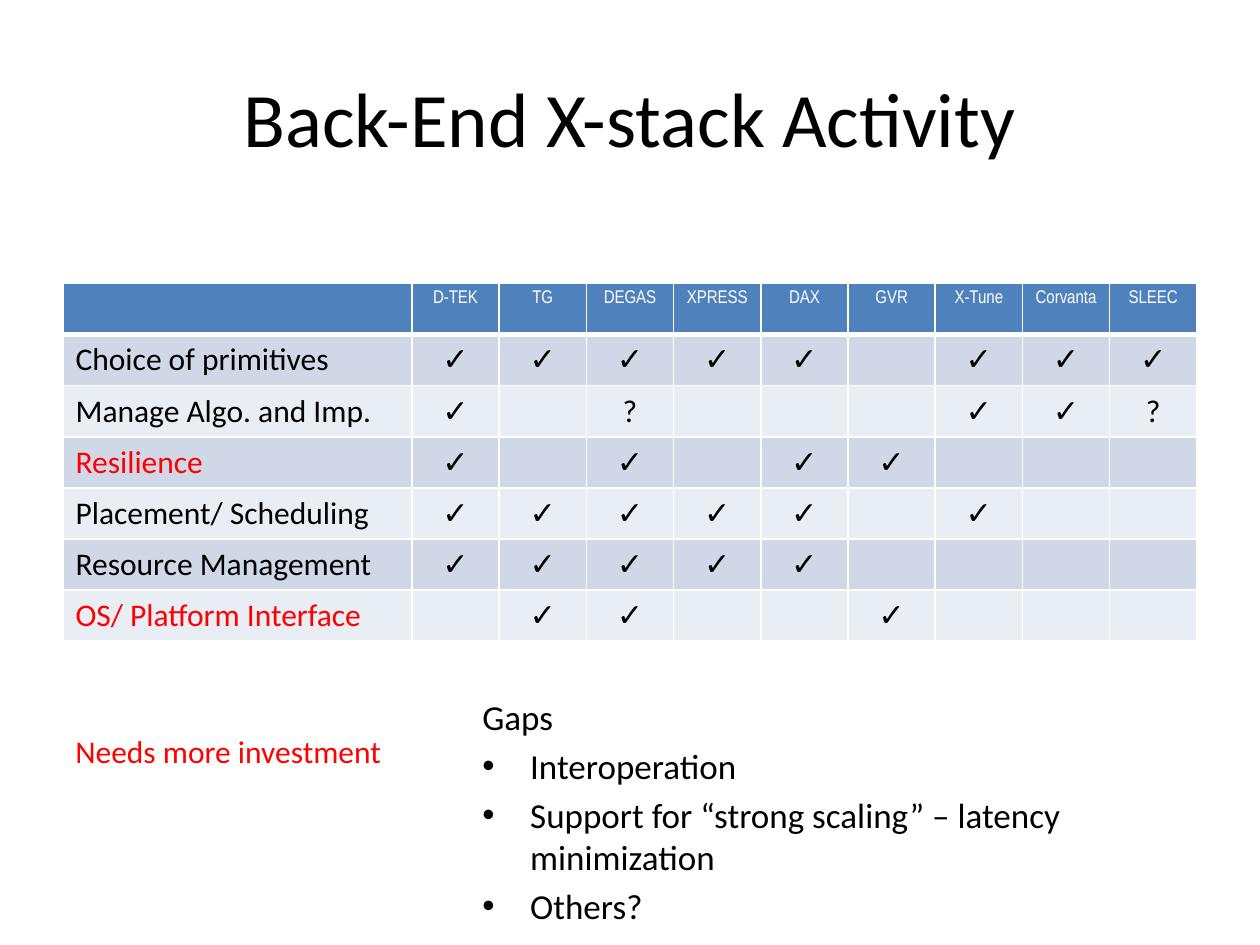
from dataclasses import dataclass

from lxml.etree import SubElement
from pptx import Presentation
from pptx.dml.color import RGBColor as Color
from pptx.enum.text import MSO_ANCHOR as Anchor, PP_ALIGN as Align
from pptx.oxml import parse_xml
from pptx.oxml.ns import nsdecls, qn
from pptx.util import Inches, Pt

TITLE = "Back-End X-stack Activity"
PROJECTS = ["D-TEK", "TG", "DEGAS", "XPRESS", "DAX", "GVR", "X-Tune", "Corvanta", "SLEEC"]
ACTIVITIES = [
    ("Choice of primitives", "✓✓✓✓✓ ✓✓✓"),
    ("Manage Algo. and Imp.", "✓ ?   ✓✓?"),
    ("Resilience", "✓ ✓ ✓✓   "),
    ("Placement/ Scheduling", "✓✓✓✓✓ ✓  "),
    ("Resource Management", "✓✓✓✓✓    "),
    ("OS/ Platform Interface", " ✓✓  ✓   "),
]
UNDERFUNDED = {"Resilience", "OS/ Platform Interface"}
LEGEND = "Needs more investment"
GAPS_HEADING = "Gaps"
GAPS = ["Interoperation", "Support for “strong scaling” – latency minimization", "Others?"]


@dataclass(frozen=True)
class Theme:
    text: str = "000000"
    alert: str = "FF0000"
    white: str = "FFFFFF"
    header: str = "4F81BD"
    bands: tuple = ("D0D8E8", "E9EDF4")
    font: str = "Calibri"
    header_font: str = "Arial Narrow"
    title_size: float = 44
    body_size: float = 20
    table_size: float = 18
    header_size: float = 10.5


THEME = Theme()


def style(paragraph, size, color=THEME.text, font=THEME.font, align=Align.LEFT):
    paragraph.alignment = align
    for run in paragraph.runs:
        run.font.size = Pt(size)
        run.font.name = font
        run.font.color.rgb = Color.from_string(color)


def add_text(slide, box, lines, size, color=THEME.text, align=Align.LEFT, wrap=True):
    text_frame = slide.shapes.add_textbox(*map(Inches, box)).text_frame
    text_frame.word_wrap = wrap
    text_frame.text = "\n".join(lines)
    for paragraph in text_frame.paragraphs:
        style(paragraph, size, color, align=align)
    return text_frame


def add_bullet(paragraph, indent=Inches(0.38)):
    properties = paragraph._p.get_or_add_pPr()
    properties.set("marL", str(indent))
    properties.set("indent", str(-indent))
    SubElement(properties, qn("a:buFont")).set("typeface", "Arial")
    SubElement(properties, qn("a:buChar")).set("char", "•")


def paint_cell(cell, fill, bottom_width=1):
    cell.fill.solid()
    cell.fill.fore_color.rgb = Color.from_string(fill)
    widths = {"lnL": 1, "lnR": 1, "lnT": 1, "lnB": bottom_width}
    for position, (side, width) in enumerate(widths.items()):
        border = parse_xml(
            f'<a:{side} {nsdecls("a")} w="{Pt(width)}"><a:solidFill>'
            f'<a:srgbClr val="{THEME.white}"/></a:solidFill></a:{side}>'
        )
        cell._tc.get_or_add_tcPr().insert(position, border)


def add_activity_table(slide, left=0.5, top=2.25, width=9, height=2.84, label_width=2.77):
    rows = [("", PROJECTS), *ACTIVITIES]
    table = slide.shapes.add_table(
        len(rows), len(PROJECTS) + 1, *map(Inches, (left, top, width, height))
    ).table
    for index, column in enumerate(table.columns):
        project_width = (width - label_width) / len(PROJECTS)
        column.width = Inches(project_width if index else label_width)
    for row_index, (label, marks) in enumerate(rows):
        is_header = row_index == 0
        fill = THEME.header if is_header else THEME.bands[(row_index - 1) % 2]
        for column_index, text in enumerate([label, *marks]):
            cell = table.cell(row_index, column_index)
            cell.text = text.strip()
            paint_cell(cell, fill, 3 if is_header else 1)
            paragraph = cell.text_frame.paragraphs[0]
            align = Align.CENTER if column_index else Align.LEFT
            if is_header:
                style(paragraph, THEME.header_size, THEME.white, THEME.header_font, align)
            else:
                color = THEME.alert if text in UNDERFUNDED else THEME.text
                style(paragraph, THEME.table_size, color, align=align)


def main():
    """Build the slide of back-end activity by project."""
    presentation = Presentation()
    presentation.slide_width, presentation.slide_height = Inches(10), Inches(7.5)
    slide = presentation.slides.add_slide(presentation.slide_layouts[6])

    title = add_text(slide, (0.5, 0.3, 9, 1.25), [TITLE], THEME.title_size, align=Align.CENTER)
    title.vertical_anchor = Anchor.MIDDLE
    add_activity_table(slide)
    add_text(slide, (0.5, 5.76, 2.66, 0.4), [LEGEND], THEME.table_size, THEME.alert, wrap=False)

    gaps = add_text(slide, (3.73, 5.47, 5.77, 1.69), [GAPS_HEADING, *GAPS], THEME.body_size)
    for paragraph in gaps.paragraphs:
        paragraph.space_before = Pt(4)
    for paragraph in gaps.paragraphs[1:]:
        add_bullet(paragraph)

    presentation.save("out.pptx")


if __name__ == "__main__":
    main()
